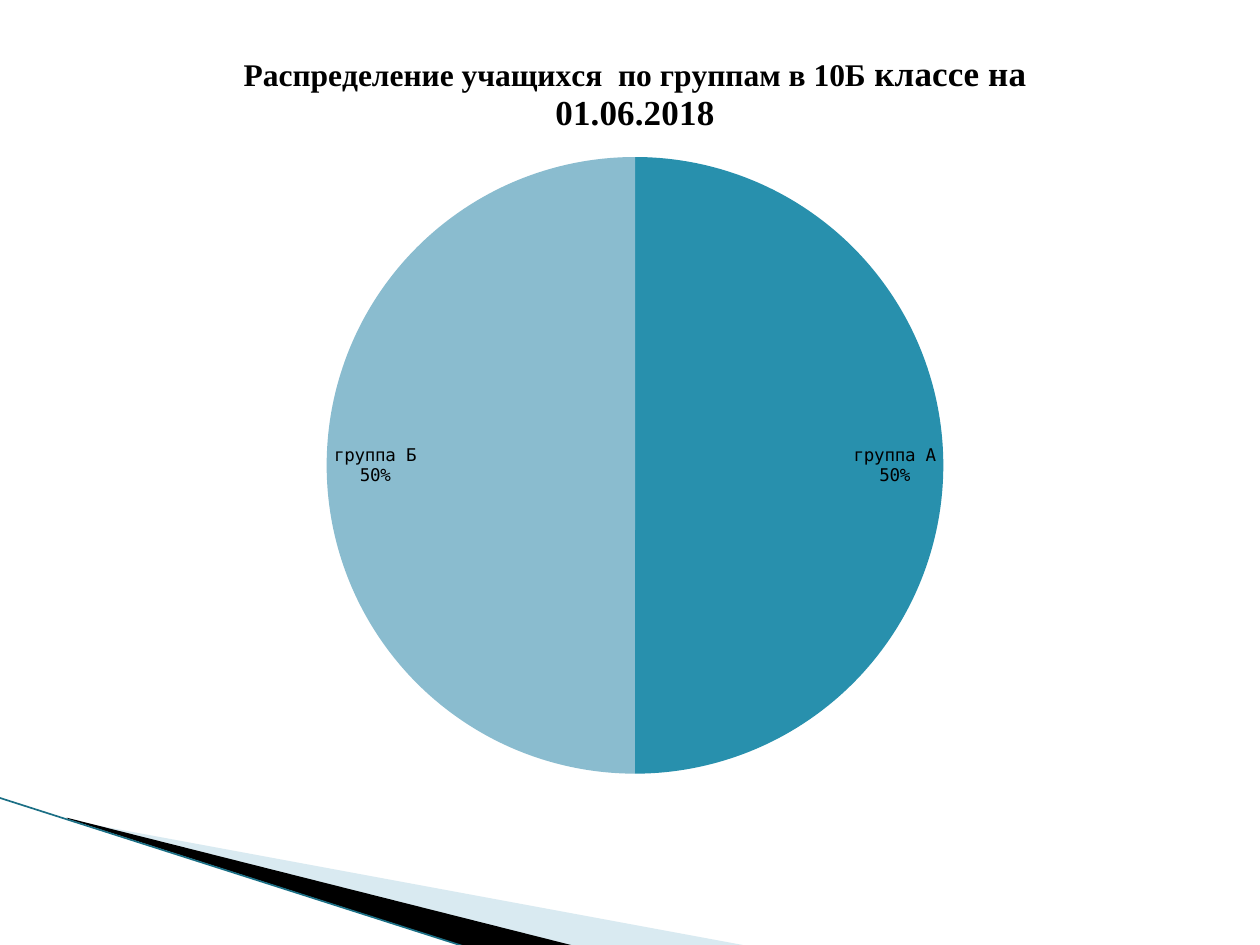
from lxml import etree
from pptx import Presentation, util as u
from pptx.chart.data import CategoryChartData
from pptx.dml.color import RGBColor
from pptx.enum import chart as ch, shapes
from pptx.oxml import parse_xml
from pptx.oxml.ns import nsdecls, qn

WIDTH, HEIGHT = 10, 7.5
GROUPS = {"группа А": (50, "2890AD"), "группа Б": (50, "8ABCCF")}
TITLE = [("Распределение учащихся  по группам в 10Б ", 18),
         ("классе на 01.06.2018", 20)]
BANDS = [
    ([(0.55, 6.51), (5.95, 7.51), (4.56, 7.51), (0.55, 6.5)], "A0CBDC", 40),
    ([(0.53, 6.49), (4.57, 7.51), (3.72, 7.52), (0.54, 6.5)], "000000", 100),
]


def color(value):
    return RGBColor.from_string(value)


def style_font(font, name, size, bold=False):
    font.name, font.size, font.bold = name, u.Pt(size), bold
    font.color.rgb = color("000000")


def add_band(s, points, fill, opacity):
    start, *rest = [(u.Inches(x), u.Inches(y)) for x, y in points]
    builder = s.shapes.build_freeform(*start)
    builder.add_line_segments(rest, close=True)
    sp = builder.convert_to_shape()
    sp.shadow.inherit = False
    sp.fill.solid()
    sp.fill.fore_color.rgb = color(fill)
    sp.line.fill.background()
    if opacity < 100:
        clr = sp._element.spPr.find(".//" + qn("a:srgbClr"))
        etree.SubElement(clr, qn("a:alpha")).set("val", str(opacity * 1000))


def add_edge(s, start, end, line_color, width):
    line = s.shapes.add_connector(shapes.MSO_CONNECTOR.STRAIGHT,
                                  *map(u.Inches, start + end))
    line.line.color.rgb = color(line_color)
    line.line.width = u.Pt(width)
    etree.SubElement(line._element.spPr, qn("a:effectLst"))


def set_title(chart):
    chart.has_title = True
    chart.chart_title.include_in_layout = False
    p = chart.chart_title.text_frame.paragraphs[0]
    for words, size in TITLE:
        r = p.add_run()
        r.text = words
        style_font(r.font, "Times New Roman", size, bold=True)


def place_plot(chart, **shares):
    """Fix the pie's inner area as shares of the chart's size."""
    plot_area = chart._chartSpace.chart.plotArea
    for old in plot_area.findall(qn("c:layout")):
        plot_area.remove(old)
    modes = "".join(f'<c:{k}Mode val="edge"/>' for k in "xy")
    sizes = "".join(f'<c:{k} val="{v}"/>' for k, v in shares.items())
    plot_area.insert(0, parse_xml(
        f'<c:layout {nsdecls("c")}><c:manualLayout>'
        f'<c:layoutTarget val="inner"/>{modes}{sizes}'
        '</c:manualLayout></c:layout>'))


def add_pie(s, left, top, width, height):
    data = CategoryChartData()
    data.categories = list(GROUPS)
    data.add_series("Series 1", [value for value, _ in GROUPS.values()])
    chart = s.shapes.add_chart(ch.XL_CHART_TYPE.PIE,
                               *map(u.Inches, (left, top, width, height)),
                               data).chart
    style_font(chart.font, "DejaVu Sans Mono", 10)
    chart.has_legend = False
    set_title(chart)
    place_plot(chart, x=0.225, y=0.17, w=0.55, h=0.81)

    plot = chart.plots[0]
    plot.vary_by_categories = True
    for i, (_, fill) in enumerate(GROUPS.values()):
        slice_format = plot.series[0].points[i].format
        slice_format.fill.solid()
        slice_format.fill.fore_color.rgb = color(fill)
        slice_format.line.fill.background()

    plot.has_data_labels = True
    labels = plot.data_labels
    labels.show_category_name = labels.show_percentage = True
    labels.show_value = False
    labels.number_format, labels.number_format_is_linked = "0%", False
    labels.position = ch.XL_LABEL_POSITION.INSIDE_END
    style_font(labels.font, "DejaVu Sans Mono", 10)
    separator = parse_xml(f'<c:separator {nsdecls("c")}>\n</c:separator>')
    labels._element.find(qn("c:showBubbleSize")).addnext(separator)


def main():
    prs = Presentation()
    prs.slide_width, prs.slide_height = u.Inches(WIDTH), u.Inches(HEIGHT)
    s = prs.slides.add_slide(prs.slide_layouts[6])
    for band in BANDS:
        add_band(s, *band)
    add_edge(s, (-0.01, 6.33), (3.71, 7.52), "1B6F85", 0.95)
    add_pie(s, 0.59, 0.21, 0.89 * WIDTH, 6.06)
    prs.save("out.pptx")


if __name__ == "__main__":
    main()
